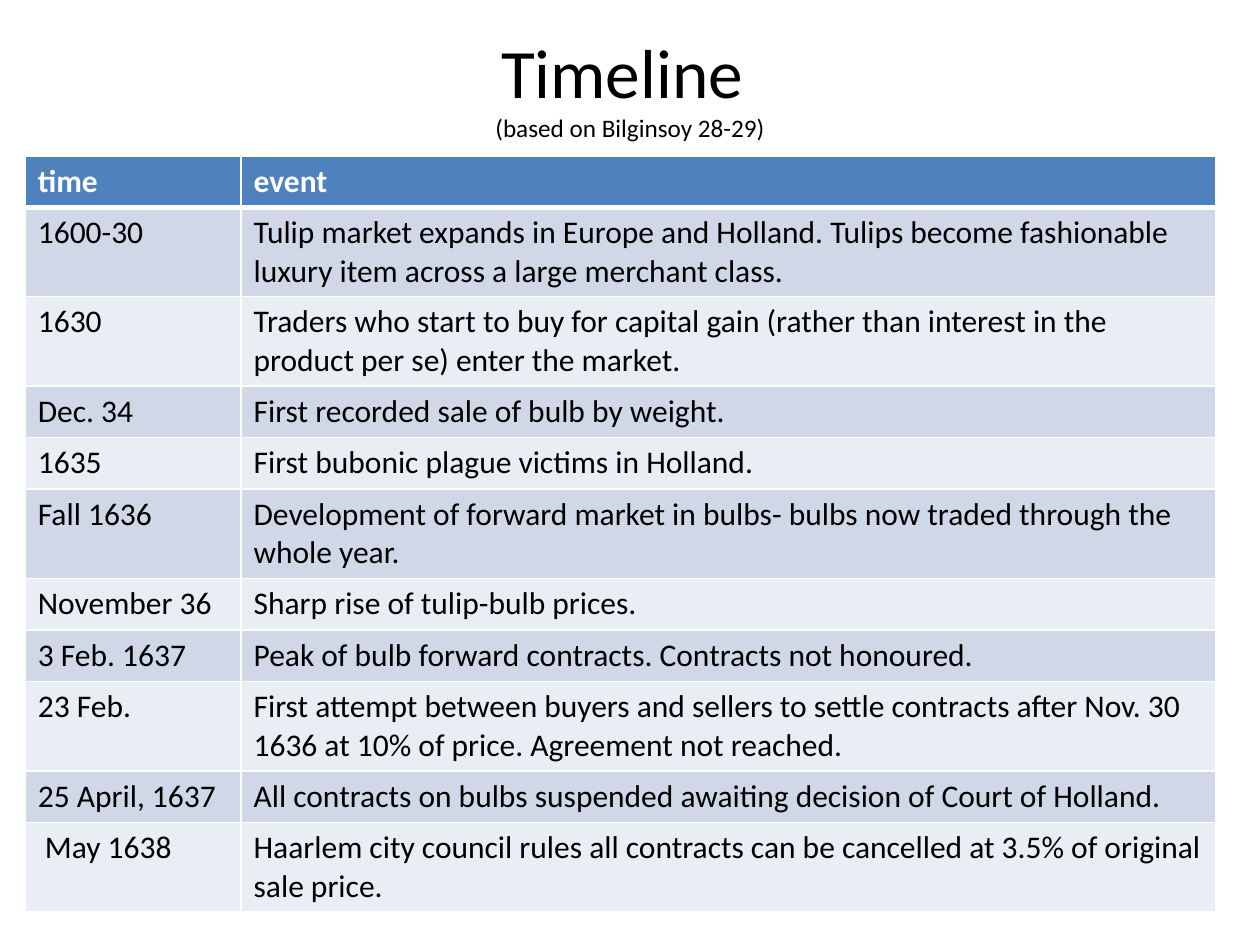
from lxml import etree
from pptx import Presentation
from pptx.dml.color import RGBColor
from pptx.enum.text import MSO_ANCHOR, PP_ALIGN
from pptx.oxml.ns import qn
from pptx.util import Cm, Pt

CENTER = PP_ALIGN.CENTER
MIDDLE = MSO_ANCHOR.MIDDLE

# Content
TITLE = "Timeline "
CITATION = "(based on Bilginsoy 28-29)"
HEADINGS = ("time", "event")
EVENTS = [
    ("1600-30", "Tulip market expands in Europe and Holland. Tulips become "
                "fashionable luxury item across a large merchant class."),
    ("1630", "Traders who start to buy for capital gain (rather than interest "
             "in the product per se) enter the market."),
    ("Dec. 34", "First recorded sale of bulb by weight."),
    ("1635", "First bubonic plague victims in Holland."),
    ("Fall 1636", "Development of forward market in bulbs- bulbs now traded "
                  "through the whole year."),
    ("November 36", "Sharp rise of tulip-bulb prices."),
    ("3 Feb. 1637", "Peak of bulb forward contracts. Contracts not honoured."),
    ("23 Feb.", "First attempt between buyers and sellers to settle contracts "
                "after Nov. 30 1636 at 10% of price. Agreement not reached."),
    ("25 April, 1637", "All contracts on bulbs suspended awaiting decision of "
                       "Court of Holland."),
    (" May 1638", "Haarlem city council rules all contracts can be cancelled "
                  "at 3.5% of original sale price."),
]

# Style
FONT = "Calibri"
BLACK, WHITE = "000000", "FFFFFF"
HEADER_FILL = "4F81BD"
BAND_FILLS = ("D0D8E8", "E9EDF4")
COLUMN_WIDTHS = (4.35, 19.65)
ONE_LINE, TWO_LINES = 1.04, 1.8
CHARS_PER_LINE = 75
THIN, THICK = 1, 3


def color(hex_value):
    return RGBColor.from_string(hex_value)


def style(run, size, hex_value, bold=False):
    run.font.name = FONT
    run.font.size = Pt(size)
    run.font.bold = bold
    run.font.color.rgb = color(hex_value)


def set_borders(cell, top, bottom):
    """Draw white cell edges; edge lines precede the fill in the cell XML."""
    properties = cell._tc.get_or_add_tcPr()
    edges = (("a:lnL", THIN), ("a:lnR", THIN), ("a:lnT", top), ("a:lnB", bottom))
    for position, (tag, width) in enumerate(edges):
        line = etree.Element(qn(tag), w=str(Pt(width)))
        fill = etree.SubElement(line, qn("a:solidFill"))
        etree.SubElement(fill, qn("a:srgbClr"), val=WHITE)
        properties.insert(position, line)


presentation = Presentation()
presentation.slide_width = Cm(25.4)
presentation.slide_height = Cm(19.05)
slide = presentation.slides.add_slide(presentation.slide_layouts[6])

# Title with its citation on the second line
heading = slide.shapes.add_textbox(Cm(1.27), Cm(0.76), Cm(22.86), Cm(1.96)).text_frame
heading.word_wrap = True
heading.vertical_anchor = MIDDLE
heading.text = f"{TITLE}\v{CITATION}"
title_line = heading.paragraphs[0]
title_line.alignment = CENTER
for run, size in zip(title_line.runs, (39.6, 14.4)):
    style(run, size, BLACK)

# Timeline table
rows = [HEADINGS, *EVENTS]
heights = [TWO_LINES if len(event) > CHARS_PER_LINE else ONE_LINE
           for _, event in rows]
timeline = slide.shapes.add_table(
    len(rows), len(HEADINGS), Cm(0.51), Cm(3.14),
    Cm(sum(COLUMN_WIDTHS)), Cm(sum(heights))).table
for column, width in zip(timeline.columns, COLUMN_WIDTHS):
    column.width = Cm(width)

for row_index, (entry, height) in enumerate(zip(rows, heights)):
    timeline.rows[row_index].height = Cm(height)
    is_header = row_index == 0
    fill_color = HEADER_FILL if is_header else BAND_FILLS[(row_index - 1) % 2]
    for column_index, wording in enumerate(entry):
        cell = timeline.cell(row_index, column_index)
        cell.text = wording
        style(cell.text_frame.paragraphs[0].runs[0], 18,
              WHITE if is_header else BLACK, is_header)
        cell.fill.solid()
        cell.fill.fore_color.rgb = color(fill_color)
        set_borders(cell, top=THICK if row_index == 1 else THIN,
                    bottom=THICK if is_header else THIN)

presentation.save("out.pptx")
